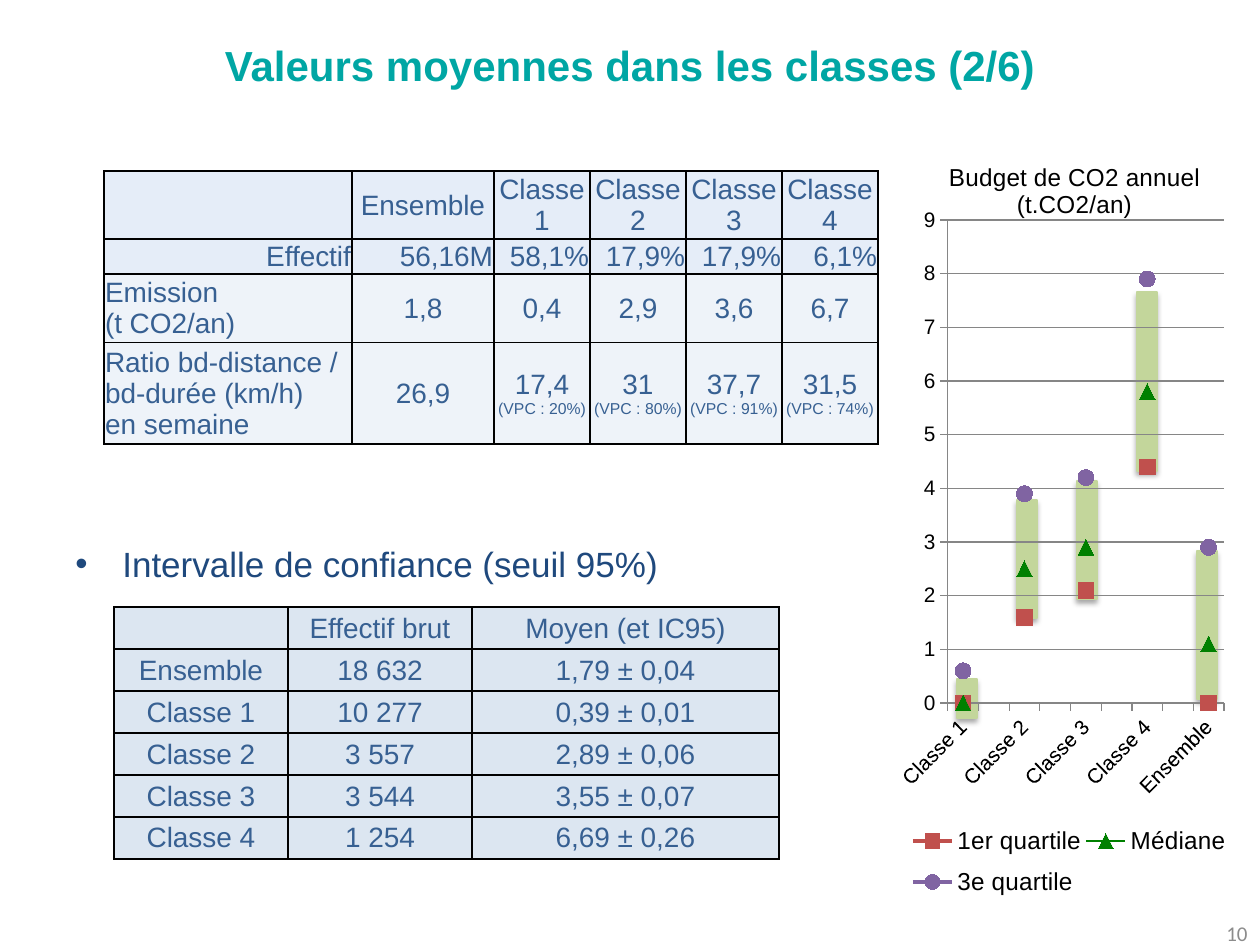
from dataclasses import dataclass

from lxml import etree
from pptx import Presentation
from pptx.chart import data as chart_data
from pptx.dml.color import RGBColor
from pptx.enum import chart as charts, shapes, text
from pptx.oxml import parse_xml
from pptx.oxml.ns import nsdecls, qn
from pptx.util import Pt

PX = 914400 / 126
LEFT, CENTER, RIGHT = text.PP_ALIGN.LEFT, text.PP_ALIGN.CENTER, text.PP_ALIGN.RIGHT


@dataclass(frozen=True)
class Theme:
    font: str = "Arial"
    number_font: str = "Calibri"
    heading: str = "00A6A4"
    body: str = "1F497D"
    cell: str = "376092"
    head_fill: str = "E5EDF8"
    row_fill: str = "EEF3F9"
    interval_fill: str = "DCE6F1"
    bar: str = "C3D69B"
    ink: str = "000000"
    grid: str = "868686"
    page: str = "8C8C8C"
    heading_size: int = 24
    body_size: int = 20
    cell_size: int = 16
    caption_size: int = 14
    axis_size: int = 12
    note_size: int = 9


THEME = Theme()


def px(*lengths):
    return [round(length * PX) for length in lengths]


def rgb(color):
    return RGBColor.from_string(color)


def style(font, size, color, bold=False, name=THEME.font):
    font.name, font.size, font.bold = name, Pt(size), bold
    font.color.rgb = rgb(color)


def add_line(slide, box, words, size, color, align, bold=False, name=THEME.font):
    frame = slide.shapes.add_textbox(*px(*box)).text_frame
    frame.word_wrap = True
    frame.vertical_anchor = text.MSO_ANCHOR.MIDDLE
    line = frame.paragraphs[0]
    line.alignment = align
    run = line.add_run()
    run.text = words
    style(run.font, size, color, bold, name)
    return line


def add_bullet(slide, box, words):
    line = add_line(slide, box, words, THEME.body_size, THEME.body, LEFT)
    props = line._p.get_or_add_pPr()
    indent = px(47)[0]
    props.set("marL", str(indent))
    props.set("indent", str(-indent))
    etree.SubElement(props, qn("a:buFont"), typeface=THEME.font)
    etree.SubElement(props, qn("a:buChar"), char="•")


def fill_cell(cell, paragraphs, align, color):
    """Each paragraph is a list of (words, size) runs."""
    cell.margin_left, cell.margin_right, cell.margin_top, cell.margin_bottom = px(1, 1, 1, 0)
    cell.vertical_anchor = text.MSO_ANCHOR.MIDDLE
    for side in ("lnL", "lnR", "lnT", "lnB"):
        cell._tc.get_or_add_tcPr().append(parse_xml(
            f'<a:{side} {nsdecls("a")} w="12700"><a:solidFill>'
            f'<a:srgbClr val="{THEME.ink}"/></a:solidFill></a:{side}>'))
    cell.fill.solid()
    cell.fill.fore_color.rgb = rgb(color)
    frame = cell.text_frame
    for i, runs in enumerate(paragraphs):
        line = frame.add_paragraph() if i else frame.paragraphs[0]
        line.alignment = align
        for words, size in runs:
            run = line.add_run()
            run.text = words
            style(run.font, size, THEME.cell)


def lines(words):
    return [[(line, THEME.cell_size)] for line in words.split("\n") if line]


def add_grid(slide, origin, widths, heights, rows, align_of, fill_of):
    box = (*origin, sum(widths), sum(heights))
    grid = slide.shapes.add_table(len(heights), len(widths), *px(*box)).table
    grid.first_row = grid.horz_banding = False
    for column, width in zip(grid.columns, px(*widths)):
        column.width = width
    for row, height in zip(grid.rows, px(*heights)):
        row.height = height
    for r, row in enumerate(rows):
        for c, content in enumerate(row):
            paragraphs = lines(content) if isinstance(content, str) else content
            fill_cell(grid.cell(r, c), paragraphs, align_of(r, c), fill_of(r))


def add_means(slide, origin):
    def ratio(value, share):
        return [[(value, THEME.cell_size)], [(f"(VPC : {share})", THEME.note_size)]]

    rows = [
        ["", "Ensemble"] + [f"Classe {n}" for n in range(1, 5)],
        ["Effectif", "56,16M", "58,1%", "17,9%", "17,9%", "6,1%"],
        ["Emission\n(t CO2/an)", "1,8", "0,4", "2,9", "3,6", "6,7"],
        ["Ratio bd-distance / bd-durée (km/h)\nen semaine", "26,9",
         ratio("17,4", "20%"), ratio("31", "80%"), ratio("37,7", "91%"), ratio("31,5", "74%")],
    ]

    def align_of(r, c):
        if r == 1:
            return RIGHT
        return LEFT if r > 1 and c == 0 else CENTER

    add_grid(slide, origin, [248, 142] + [96] * 4, [64, 35, 64, 95], rows, align_of,
             lambda r: THEME.head_fill if r < 2 else THEME.row_fill)


def add_intervals(slide, origin):
    rows = [
        ["", "Effectif brut", "Moyen (et IC95)"],
        ["Ensemble", "18 632", "1,79 ± 0,04"],
        ["Classe 1", "10 277", "0,39 ± 0,01"],
        ["Classe 2", "3 557", "2,89 ± 0,06"],
        ["Classe 3", "3 544", "3,55 ± 0,07"],
        ["Classe 4", "1 254", "6,69 ± 0,26"],
    ]
    add_grid(slide, origin, [174, 184, 307], [42] * 6, rows,
             lambda r, c: CENTER, lambda r: THEME.interval_fill)


def add_range_bars(slide, left, top):
    # Top and height of the interquartile bar of each category
    spans = [(387, 39), (208, 118), (189, 118), (0, 179), (259, 148)]
    for i, (offset, height) in enumerate(spans):
        bar = slide.shapes.add_shape(shapes.MSO_SHAPE.RECTANGLE,
                                     *px(left + 60 * i, top + offset, 20, height))
        bar.fill.solid()
        bar.fill.fore_color.rgb = bar.line.color.rgb = rgb(THEME.bar)
        bar.line.width = Pt(0.75)
        bar.shadow.inherit = False
        effects = bar._element.spPr.find(qn("a:effectLst"))
        effects.append(parse_xml(
            f'<a:outerShdw {nsdecls("a")} blurRad="39370" dist="22860" dir="5400000" '
            f'rotWithShape="0"><a:srgbClr val="{THEME.ink}"><a:alpha val="35000"/>'
            '</a:srgbClr></a:outerShdw>'))


def place(part, index, **fractions):
    """Give a chart part a fixed place, in fractions of the chart."""
    for old in part.findall(qn("c:layout")):
        part.remove(old)
    layout = etree.Element(qn("c:layout"))
    manual = etree.SubElement(layout, qn("c:manualLayout"))
    for tag, value in fractions.items():
        etree.SubElement(manual, qn(f"c:{tag}"), val=str(value))
    part.insert(index, layout)


def add_quartiles(slide, box):
    marks = charts.XL_MARKER_STYLE
    quartiles = [
        ("1er quartile", (0, 1.6, 2.1, 4.4, 0), "C0504D", marks.SQUARE, 2.25),
        ("Médiane", (0, 2.5, 2.9, 5.8, 1.1), "008000", marks.TRIANGLE, 0.75),
        ("3e quartile", (0.6, 3.9, 4.2, 7.9, 2.9), "8064A2", marks.CIRCLE, 2.25),
    ]

    def spaced(items, gap):
        return [item for pair in items for item in (pair, gap)][:-1]

    source = chart_data.CategoryChartData()
    source.categories = spaced([f"Classe {n}" for n in range(1, 5)] + ["Ensemble"], "")
    for name, values, *_ in quartiles:
        source.add_series(name, spaced(values, None))
    chart = slide.shapes.add_chart(charts.XL_CHART_TYPE.LINE_MARKERS, *px(*box), source).chart
    style(chart.font, THEME.axis_size, THEME.ink)
    for series, (_, _, color, mark, width) in zip(chart.plots[0].series, quartiles):
        series.smooth = False
        series.format.line.color.rgb = rgb(color)
        series.format.line.width = Pt(width)
        series.marker.style, series.marker.size = mark, 9
        series.marker.format.fill.solid()
        series.marker.format.fill.fore_color.rgb = rgb(color)
        series.marker.format.line.color.rgb = rgb(color)

    # Axes
    scale, classes = chart.value_axis, chart.category_axis
    scale.minimum_scale, scale.maximum_scale, scale.major_unit = 0, 9, 1
    scale.has_major_gridlines = True
    scale.major_gridlines.format.line.color.rgb = rgb(THEME.grid)
    for axis in (scale, classes):
        axis.major_tick_mark = charts.XL_TICK_MARK.OUTSIDE
        axis.format.line.color.rgb = rgb(THEME.grid)
        style(axis.tick_labels.font, THEME.axis_size, THEME.ink)
    classes._element.xpath("c:txPr/a:bodyPr")[0].set("rot", "-2700000")

    # Title, legend and plot area
    chart.has_title = chart.has_legend = True
    run = chart.chart_title.text_frame.paragraphs[0].add_run()
    run.text = "Budget de CO2 annuel (t.CO2/an)"
    style(run.font, THEME.caption_size, THEME.ink)
    chart.legend.position = charts.XL_LEGEND_POSITION.RIGHT
    chart.legend.include_in_layout = False
    style(chart.legend.font, THEME.caption_size, THEME.ink)
    edges = {"xMode": "edge", "yMode": "edge"}
    place(chart.chart_title._element, 1, **edges, x=0.13, y=0.04)
    place(chart.legend._element, 1, **edges, x=0.02, y=0.87, w=0.97, h=0.12)
    place(chart._chartSpace.chart.plotArea, 0, layoutTarget="inner", **edges,
          x=0.14, y=0.12, w=0.83, h=0.61)


def main():
    deck = Presentation()
    deck.slide_width, deck.slide_height = px(1260, 945)
    slide = deck.slides.add_slide(deck.slide_layouts[6])
    add_line(slide, (0, 26, 1260, 77), "Valeurs moyennes dans les classes (2/6)",
             THEME.heading_size, THEME.heading, CENTER, bold=True)
    add_bullet(slide, (63, 538, 780, 52), "Intervalle de confiance (seuil 95%)")
    add_line(slide, (968, 908, 292, 50), "10", THEME.axis_size, THEME.page, RIGHT,
             name=THEME.number_font)
    add_means(slide, (104, 171))
    add_intervals(slide, (114, 607))
    add_range_bars(slide, 957, 292)
    add_quartiles(slide, (898, 125, 336, 792))
    deck.save("out.pptx")


if __name__ == "__main__":
    main()
